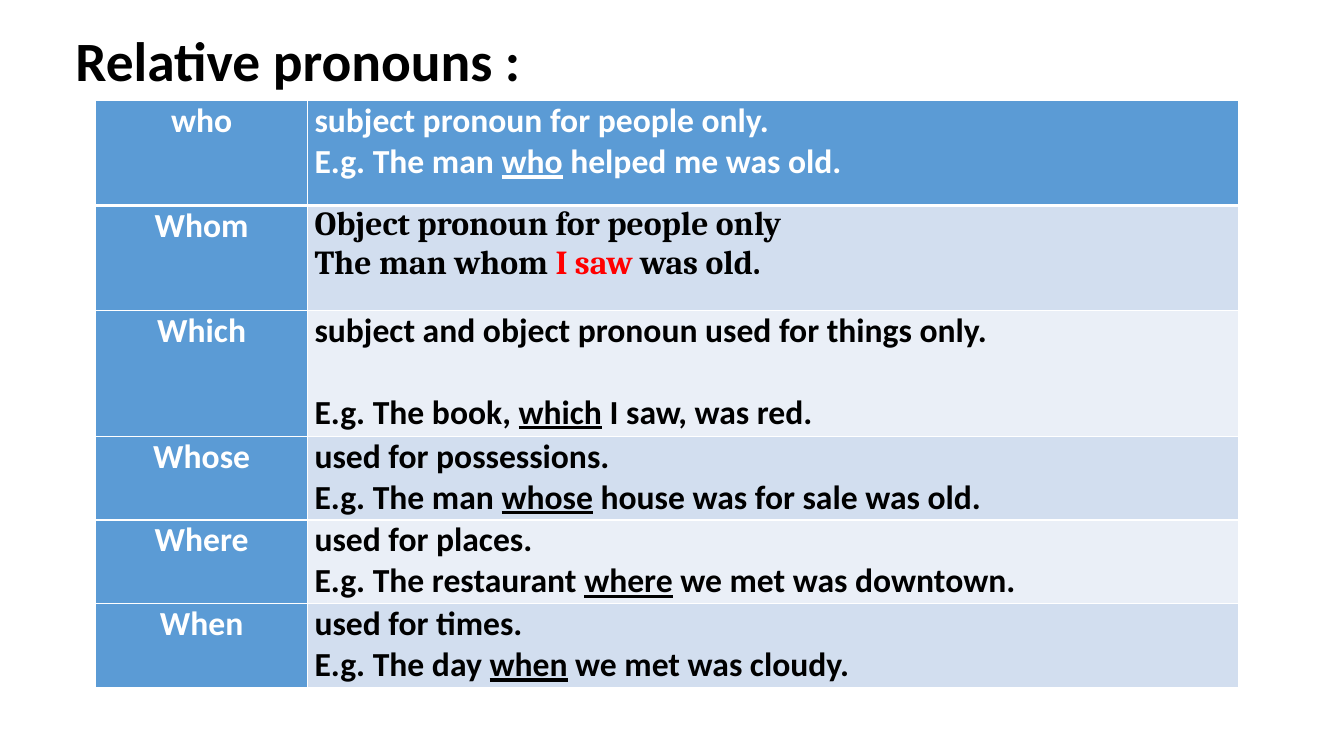
from dataclasses import dataclass

from lxml import etree
from pptx import Presentation
from pptx import util as u
from pptx.dml.color import RGBColor
from pptx.enum import text
from pptx.oxml import ns


@dataclass(frozen=True)
class Theme:
    font: str = "Calibri"
    accent_font: str = "Cambria"
    title_size: float = 39.6
    body_size: float = 24
    black: str = "000000"
    white: str = "FFFFFF"
    red: str = "FF0000"
    blue: str = "5B9BD5"
    bands: tuple = ("D2DEEF", "EAEFF7")
    thin: float = 1
    thick: float = 3


THEME = Theme()
COLUMN_WIDTHS = (2.1, 9.23)
PLAIN, UNDERLINED, RED = "plain", "underlined", "red"


@dataclass(frozen=True)
class Pronoun:
    word: str
    height: float
    use: str
    example: tuple  # lead-in, highlighted words, ending
    highlight: str = UNDERLINED
    font: str = THEME.font
    gap: float = 0  # points above the example


PRONOUNS = (
    Pronoun("who", 1.04, "subject pronoun for people only.",
            ("E.g. The man ", "who", " helped me was old.")),
    Pronoun("Whom", 1.04, "Object pronoun for people only",
            ("The man whom ", "I saw ", "was old."), RED, THEME.accent_font),
    Pronoun("Which", 1.25, "subject and object pronoun used for things only.",
            ("E.g. The book, ", "which", " I saw, was red."), gap=29.3),
    Pronoun("Whose", 0.83, "used for possessions.",
            ("E.g. The man ", "whose", " house was for sale was old.")),
    Pronoun("Where", 0.83, "used for places.",
            ("E.g. The restaurant ", "where", " we met was downtown.")),
    Pronoun("When", 0.83, "used for times.",
            ("E.g. The day ", "when", " we met was cloudy.")),
)


def format_run(run, color, size=THEME.body_size, font=THEME.font):
    run.font.name = font
    run.font.size = u.Pt(size)
    run.font.bold = True
    run.font.color.rgb = RGBColor.from_string(color)


def add_title(slide, title):
    box = slide.shapes.add_textbox(u.Inches(0.65), u.Inches(0.27),
                                   u.Inches(10.24), u.Inches(0.73))
    frame = box.text_frame
    frame.word_wrap = True
    frame.vertical_anchor = text.MSO_ANCHOR.MIDDLE
    frame.text = title
    paragraph = frame.paragraphs[0]
    paragraph.line_spacing = 0.9
    format_run(paragraph.runs[0], THEME.black, THEME.title_size)


def set_borders(cell, top, bottom):
    properties = cell._tc.get_or_add_tcPr()
    widths = {"lnL": THEME.thin, "lnR": THEME.thin, "lnT": top, "lnB": bottom}
    for side, width in widths.items():
        line = etree.SubElement(properties, ns.qn(f"a:{side}"), w=str(u.Pt(width)))
        fill = etree.SubElement(line, ns.qn("a:solidFill"))
        etree.SubElement(fill, ns.qn("a:srgbClr"), val=THEME.white)


def style_cell(cell, fill, row):
    set_borders(cell, THEME.thick if row == 1 else THEME.thin,
                THEME.thick if row == 0 else THEME.thin)
    cell.fill.solid()
    cell.fill.fore_color.rgb = RGBColor.from_string(fill)
    cell.margin_left = cell.margin_right = u.Inches(0.07)
    cell.margin_top = cell.margin_bottom = 0


def fill_word(cell, word):
    cell.text_frame.text = word
    paragraph = cell.text_frame.paragraphs[0]
    paragraph.alignment = text.PP_ALIGN.CENTER
    format_run(paragraph.runs[0], THEME.white)


def fill_explanation(cell, pronoun, color):
    frame = cell.text_frame
    frame.text = pronoun.use
    format_run(frame.paragraphs[0].runs[0], color, font=pronoun.font)

    example = frame.add_paragraph()
    example.space_before = u.Pt(pronoun.gap)
    for words, style in zip(pronoun.example, (PLAIN, pronoun.highlight, PLAIN)):
        run = example.add_run()
        run.text = words
        format_run(run, THEME.red if style == RED else color, font=pronoun.font)
        run.font.underline = style == UNDERLINED


def add_pronoun_table(slide):
    height = sum(pronoun.height for pronoun in PRONOUNS)
    table = slide.shapes.add_table(
        len(PRONOUNS), len(COLUMN_WIDTHS), u.Inches(0.95), u.Inches(1),
        u.Inches(sum(COLUMN_WIDTHS)), u.Inches(height)).table
    for column, width in zip(table.columns, COLUMN_WIDTHS):
        column.width = u.Inches(width)

    for row, pronoun in enumerate(PRONOUNS):
        table.rows[row].height = u.Inches(pronoun.height)
        word_cell, explanation_cell = table.cell(row, 0), table.cell(row, 1)
        is_header = row == 0
        band = THEME.blue if is_header else THEME.bands[(row - 1) % 2]
        style_cell(word_cell, THEME.blue, row)
        style_cell(explanation_cell, band, row)
        fill_word(word_cell, pronoun.word)
        fill_explanation(explanation_cell, pronoun,
                         THEME.white if is_header else THEME.black)


def main():
    # Blank widescreen slide
    presentation = Presentation()
    presentation.slide_width = u.Inches(13.33)
    presentation.slide_height = u.Inches(7.5)
    slide = presentation.slides.add_slide(presentation.slide_layouts[6])

    # Heading and table
    add_title(slide, "Relative pronouns :")
    add_pronoun_table(slide)

    presentation.save("out.pptx")


if __name__ == "__main__":
    main()
